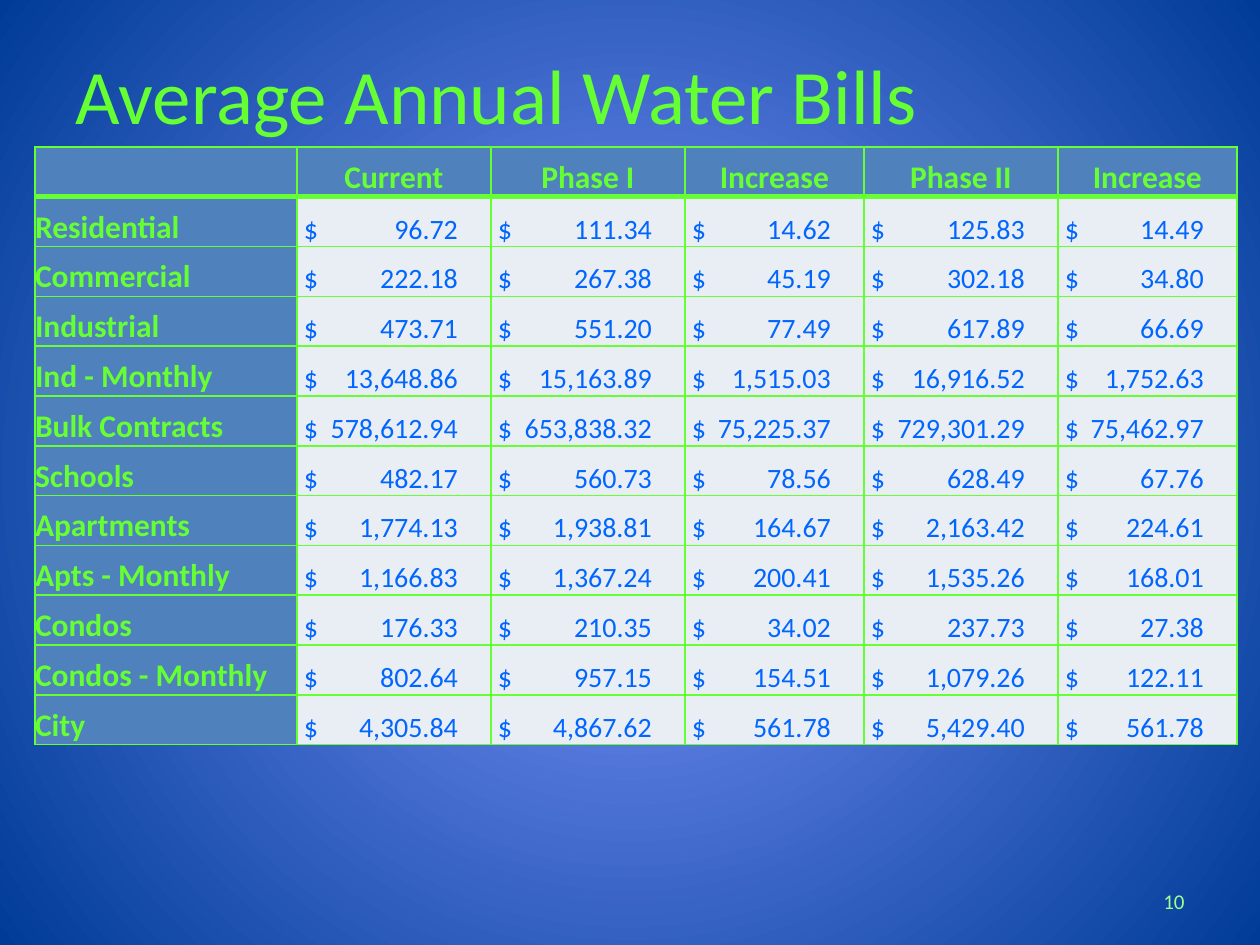
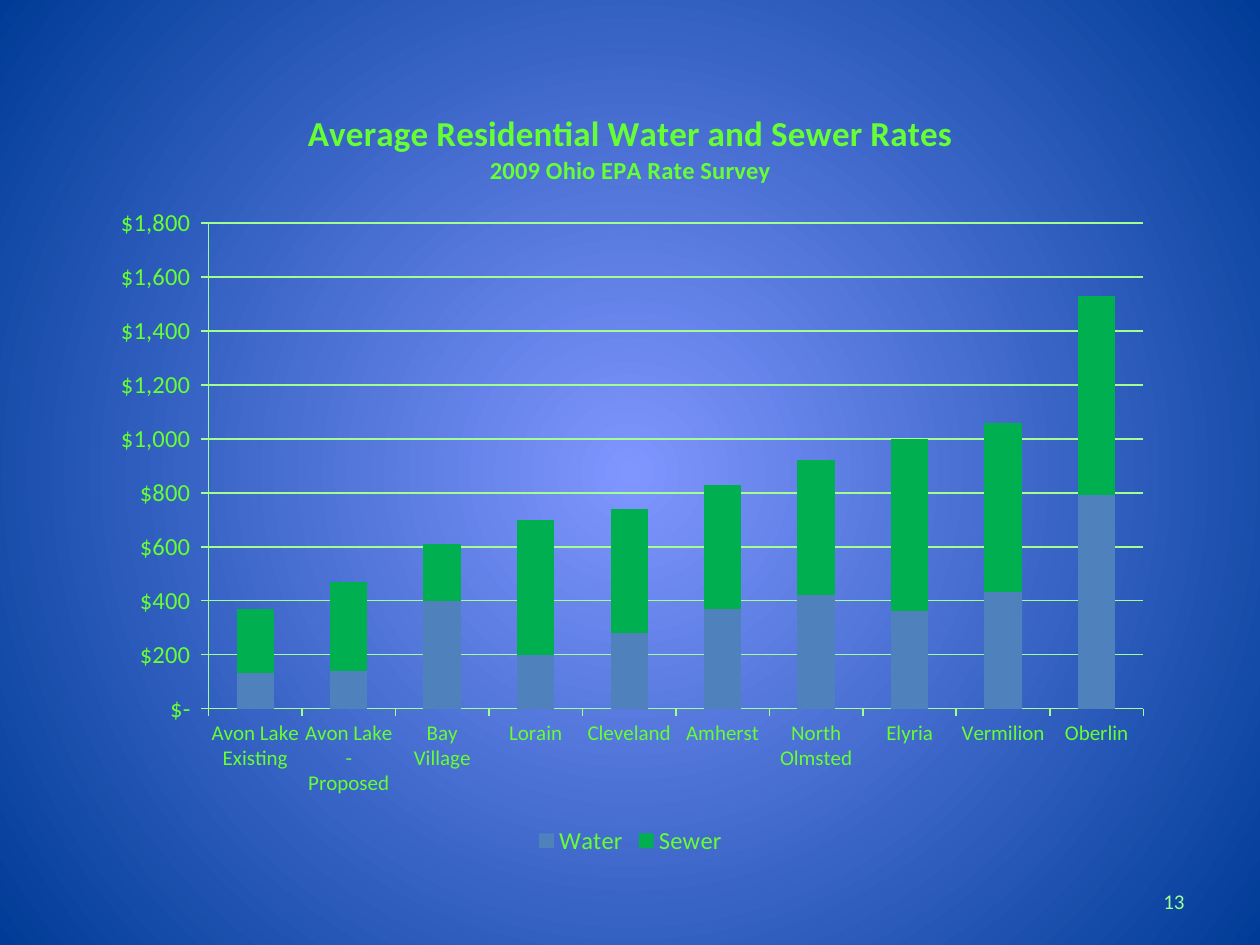
"""Build two slides on water bills and residential utility rates."""
from lxml import etree
from pptx import Presentation
from pptx import util as u
from pptx.chart.data import CategoryChartData
from pptx.dml.color import RGBColor
from pptx.enum import chart as charts
from pptx.enum import text
from pptx.oxml import parse_xml
from pptx.oxml.ns import nsdecls, qn

FONT = "Calibri"
GREEN = RGBColor(0x66, 0xFF, 0x33)
PALE_GREEN = RGBColor(0xA0, 0xFF, 0x90)
BLUE = RGBColor(0x00, 0x66, 0xFF)
STEEL = RGBColor(0x4F, 0x81, 0xBD)
EMERALD = RGBColor(0x00, 0xB0, 0x50)
CELL_GREY = RGBColor(0xE9, 0xED, 0xF4)
GLOW = RGBColor(0x7F, 0x96, 0xFF)
NAVY = RGBColor(0x00, 0x3C, 0x97)

TITLE_BOX = (63, 10, 1134, 168)
NUMBER_BOX = (903, 876, 294, 50)
TABLE_BOX = (35, 147, 1203, 598)
CHART_BOX = (95, 84, 1071, 777)
PLOT_BOX = (114, 139, 935, 486)

COLUMN_WIDTHS = (262, 194, 194, 179, 194, 179)
CELL_INSET = 7
AMOUNT_MARGIN = 33
BILL_HEADINGS = ("", "Current", "Phase I", "Increase", "Phase II", "Increase")
BILLS = (
    ("Residential", 96.72, 111.34, 14.62, 125.83, 14.49),
    ("Commercial", 222.18, 267.38, 45.19, 302.18, 34.80),
    ("Industrial", 473.71, 551.20, 77.49, 617.89, 66.69),
    ("Ind - Monthly", 13648.86, 15163.89, 1515.03, 16916.52, 1752.63),
    ("Bulk Contracts", 578612.94, 653838.32, 75225.37, 729301.29, 75462.97),
    ("Schools", 482.17, 560.73, 78.56, 628.49, 67.76),
    ("Apartments", 1774.13, 1938.81, 164.67, 2163.42, 224.61),
    ("Apts - Monthly", 1166.83, 1367.24, 200.41, 1535.26, 168.01),
    ("Condos", 176.33, 210.35, 34.02, 237.73, 27.38),
    ("Condos - Monthly", 802.64, 957.15, 154.51, 1079.26, 122.11),
    ("City", 4305.84, 4867.62, 561.78, 5429.40, 561.78),
)

RATE_TITLE = (("Average Residential Water and Sewer Rates", 20),
              ("2009 Ohio EPA Rate Survey", 14))
CITIES = ("Avon Lake Existing", "Avon Lake - Proposed", "Bay Village", "Lorain",
          "Cleveland", "Amherst", "North Olmsted", "Elyria", "Vermilion", "Oberlin")
RATES = (
    ("Water", STEEL, (130, 140, 400, 200, 280, 370, 420, 360, 430, 790)),
    ("Sewer", EMERALD, (240, 330, 210, 500, 460, 460, 500, 640, 630, 740)),
)
DOLLARS = r'_("$"* #,##0_);_("$"* \(#,##0\);_("$"* "-"_);_(@_)'


def px(length):
    """Turn pixels into EMU."""
    return u.Emu(round(length * 914400 / 126))


def scaled(box):
    """Turn a box of pixels into EMU."""
    return [px(length) for length in box]


def style_font(font, size, color, bold=False):
    """Set the shared typeface with a size, colour and weight."""
    font.name, font.size, font.bold = FONT, u.Pt(size), bold
    font.color.rgb = color


def add_run(paragraph, wording, size, color, bold=False):
    """Add one formatted run."""
    run = paragraph.add_run()
    run.text = wording
    style_font(run.font, size, color, bold)


def set_background(master):
    """Give every slide the circular blue gradient."""
    fill = master.background.fill
    fill.gradient()
    for stop, color in zip(fill.gradient_stops, (GLOW, NAVY)):
        stop.color.rgb = color
    line = next(master.element.cSld.iter(qn("a:lin")))
    circle = parse_xml(
        f'<a:path {nsdecls("a")} path="circle">'
        '<a:fillToRect l="50000" t="50000" r="50000" b="50000"/></a:path>')
    line.getparent().replace(line, circle)


def add_title(slide, box, wording):
    """Place and format the title placeholder."""
    title = slide.shapes.title
    title.left, title.top, title.width, title.height = scaled(box)
    title.text_frame.vertical_anchor = text.MSO_ANCHOR.MIDDLE
    paragraph = title.text_frame.paragraphs[0]
    paragraph.alignment = text.PP_ALIGN.LEFT
    add_run(paragraph, wording, 44, GREEN)


def add_slide_number(slide, box, number):
    """Add the page number at the lower right."""
    frame = slide.shapes.add_textbox(*scaled(box)).text_frame
    frame.word_wrap = True
    frame.vertical_anchor = text.MSO_ANCHOR.MIDDLE
    paragraph = frame.paragraphs[0]
    paragraph.alignment = text.PP_ALIGN.RIGHT
    add_run(paragraph, str(number), 12, PALE_GREEN)


def set_borders(cell, top, bottom):
    """Draw green cell borders, with the top and bottom widths in points."""
    widths = (("lnL", 1), ("lnR", 1), ("lnT", top), ("lnB", bottom))
    properties = cell._tc.get_or_add_tcPr()
    for index, (side, width) in enumerate(widths):
        properties.insert(index, parse_xml(
            f'<a:{side} {nsdecls("a")} w="{u.Pt(width)}"><a:solidFill>'
            f'<a:srgbClr val="{GREEN}"/></a:solidFill></a:{side}>'))


def add_amount(cell, amount, column_width):
    """Set a dollar sign at the left and the amount at a right tab."""
    cell.margin_left = px(CELL_INSET)
    paragraph = cell.text_frame.paragraphs[0]
    tabs = etree.SubElement(paragraph._p.get_or_add_pPr(), qn("a:tabLst"))
    position = px(column_width - CELL_INSET - AMOUNT_MARGIN)
    etree.SubElement(tabs, qn("a:tab"), pos=str(position), algn="r")
    add_run(paragraph, f"$\t{amount:,.2f}", 16, BLUE)


def add_bill_table(slide, box):
    """Add the table of bills by customer class."""
    rows = (BILL_HEADINGS, *BILLS)
    table = slide.shapes.add_table(len(rows), len(COLUMN_WIDTHS), *scaled(box)).table
    table.horz_banding = False
    for column, width in zip(table.columns, COLUMN_WIDTHS):
        column.width = px(width)
    for row_index, values in enumerate(rows):
        table.rows[row_index].height = px(box[3] / len(rows))
        for column_index, value in enumerate(values):
            cell = table.cell(row_index, column_index)
            cell.margin_left = cell.margin_right = cell.margin_top = cell.margin_bottom = 0
            cell.vertical_anchor = text.MSO_ANCHOR.BOTTOM
            is_label = isinstance(value, str)
            cell.fill.solid()
            cell.fill.fore_color.rgb = STEEL if is_label else CELL_GREY
            set_borders(cell, 3 if row_index == 1 else 1, 3 if row_index == 0 else 1)
            if not is_label:
                add_amount(cell, value, COLUMN_WIDTHS[column_index])
            elif value:
                paragraph = cell.text_frame.paragraphs[0]
                if row_index == 0:
                    paragraph.alignment = text.PP_ALIGN.CENTER
                add_run(paragraph, value, 18, GREEN, True)


def style_line(line):
    """Draw a thin pale green chart line."""
    line.color.rgb = PALE_GREEN
    line.width = u.Pt(1)


def place_plot(chart, box, chart_box):
    """Fix the inner plot area inside the chart."""
    width, height = chart_box[2:]
    shares = zip("xywh", box, (width, height, width, height))
    sizes = "".join(f'<c:{key} val="{length / whole:.3f}"/>' for key, length, whole in shares)
    modes = '<c:xMode val="edge"/><c:yMode val="edge"/>'
    layout = parse_xml(
        f'<c:layout {nsdecls("c")}><c:manualLayout><c:layoutTarget val="inner"/>'
        f'{modes}{sizes}</c:manualLayout></c:layout>')
    plot_area = chart._chartSpace.chart.plotArea
    for previous in plot_area.findall(qn("c:layout")):
        plot_area.remove(previous)
    plot_area.insert(0, layout)


def add_rate_chart(slide, box):
    """Add the stacked chart of water and sewer rates."""
    data = CategoryChartData()
    data.categories = CITIES
    for name, _, values in RATES:
        data.add_series(name, values)
    chart = slide.shapes.add_chart(
        charts.XL_CHART_TYPE.COLUMN_STACKED, *scaled(box), data).chart
    style_font(chart.font, 10, GREEN)

    frame = chart.chart_title.text_frame
    chart.chart_title.include_in_layout = False
    for index, (wording, size) in enumerate(RATE_TITLE):
        paragraph = frame.add_paragraph() if index else frame.paragraphs[0]
        add_run(paragraph, wording, size, GREEN, True)

    plot = chart.plots[0]
    plot.gap_width, plot.overlap, plot.vary_by_categories = 150, 100, False
    for series, (_, color, _) in zip(plot.series, RATES):
        series.format.fill.solid()
        series.format.fill.fore_color.rgb = color

    for axis, size in ((chart.category_axis, 12), (chart.value_axis, 14)):
        style_font(axis.tick_labels.font, size, GREEN)
        style_line(axis.format.line)
        axis.major_tick_mark = charts.XL_TICK_MARK.OUTSIDE
    values = chart.value_axis
    values.minimum_scale, values.maximum_scale, values.major_unit = 0, 1800, 200
    style_line(values.major_gridlines.format.line)
    values.tick_labels.number_format = DOLLARS
    values.tick_labels.number_format_is_linked = False

    chart.has_legend = True
    chart.legend.position = charts.XL_LEGEND_POSITION.BOTTOM
    chart.legend.include_in_layout = False
    style_font(chart.legend.font, 14, GREEN)
    place_plot(chart, PLOT_BOX, box)


def build_bill_slide(presentation):
    """Build the slide of average water bills."""
    slide = presentation.slides.add_slide(presentation.slide_layouts[5])
    add_title(slide, TITLE_BOX, "Average Annual Water Bills")
    add_slide_number(slide, NUMBER_BOX, 10)
    add_bill_table(slide, TABLE_BOX)


def build_rate_slide(presentation):
    """Build the slide comparing rates between cities."""
    slide = presentation.slides.add_slide(presentation.slide_layouts[6])
    add_slide_number(slide, NUMBER_BOX, 13)
    add_rate_chart(slide, CHART_BOX)


def main():
    """Build and save the presentation."""
    presentation = Presentation()
    presentation.slide_width, presentation.slide_height = px(1260), px(945)
    set_background(presentation.slide_master)
    build_bill_slide(presentation)
    build_rate_slide(presentation)
    presentation.save("out.pptx")


if __name__ == "__main__":
    main()
